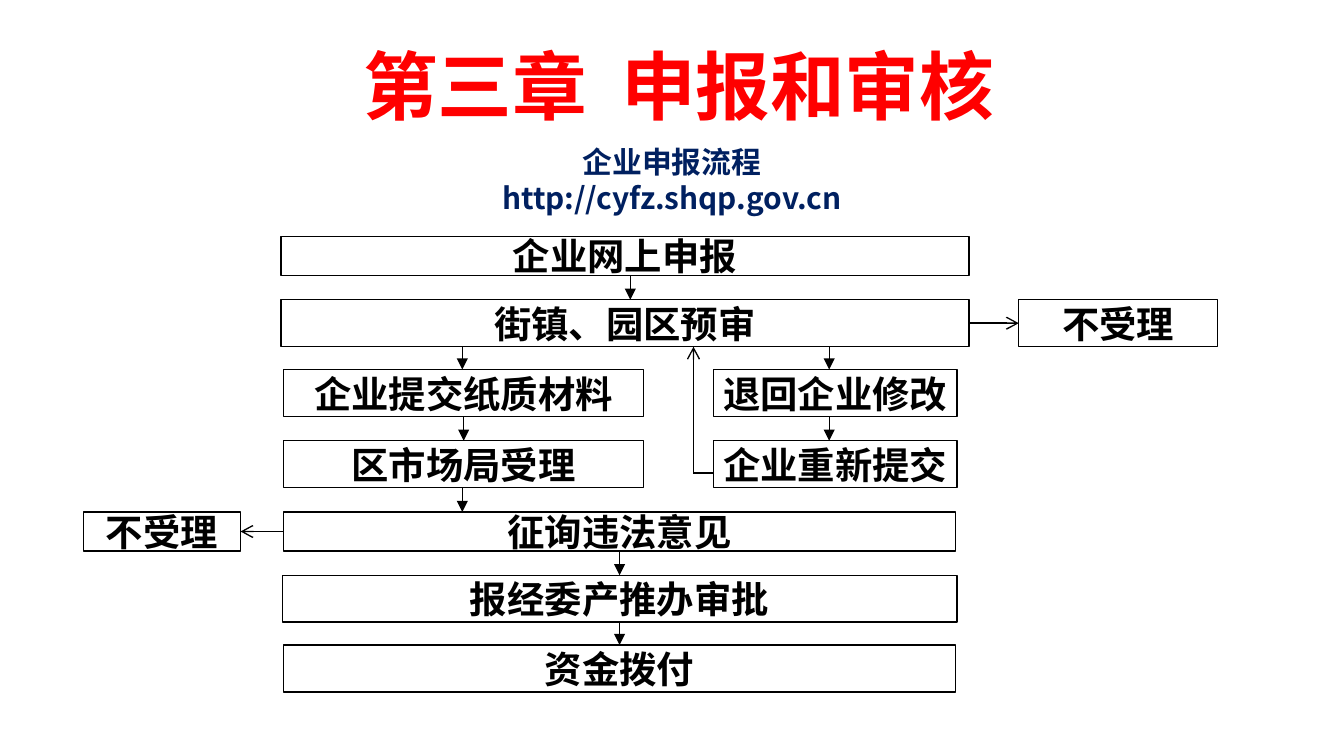
from dataclasses import dataclass

from lxml import etree
from pptx import Presentation
from pptx import util as u
from pptx.dml.color import RGBColor
from pptx.enum import shapes, text
from pptx.oxml.ns import qn


@dataclass(frozen=True)
class Theme:
    font: str = "Noto Sans CJK SC"
    red: str = "FF0000"
    navy: str = "002060"
    black: str = "000000"
    white: str = "FFFFFF"
    title_size: int = 40
    subtitle_size: int = 16
    box_size: int = 20
    line_width: float = 0.75


THEME = Theme()
TOP, LEFT, BOTTOM, RIGHT = range(4)

# Rows of the flow chart: top and height
ROWS = {
    "apply": (1.76, 0.29),
    "review": (2.23, 0.35),
    "submit": (2.75, 0.35),
    "accept": (3.28, 0.35),
    "consult": (3.81, 0.29),
    "approve": (4.28, 0.35),
    "pay": (4.80, 0.35),
}

# Boxes: name, row, left, width, label
BOXES = [
    ("apply", "apply", 2.09, 5.12, "企业网上申报"),
    ("review", "review", 2.09, 5.12, "街镇、园区预审"),
    ("review_refused", "review", 7.58, 1.48, "不受理"),
    ("submit", "submit", 2.11, 2.68, "企业提交纸质材料"),
    ("return", "submit", 5.31, 1.81, "退回企业修改"),
    ("accept", "accept", 2.11, 2.68, "区市场局受理"),
    ("resubmit", "accept", 5.31, 1.81, "企业重新提交"),
    ("consult", "consult", 2.11, 5.00, "征询违法意见"),
    ("consult_refused", "consult", 0.62, 1.17, "不受理"),
    ("approve", "approve", 2.10, 5.02, "报经委产推办审批"),
    ("pay", "pay", 2.11, 5.00, "资金拨付"),
]

# Arrows between side middles: from, side, to, side, head
JOINED_ARROWS = [
    ("submit", BOTTOM, "accept", TOP, "triangle"),
    ("consult", BOTTOM, "approve", TOP, "triangle"),
    ("approve", BOTTOM, "pay", TOP, "triangle"),
    ("review", RIGHT, "review_refused", LEFT, "arrow"),
    ("consult", LEFT, "consult_refused", RIGHT, "arrow"),
]

# Downward arrows placed off the middle of a side: x, upper row, lower row
DOWN_ARROWS = [
    (4.69, "apply", "review"),
    (3.44, "review", "submit"),
    (6.17, "review", "submit"),
    (6.17, "submit", "accept"),
    (3.44, "accept", "consult"),
]


def color(value):
    return RGBColor.from_string(value)


def style_text(frame, size, value):
    for para in frame.paragraphs:
        para.alignment = text.PP_ALIGN.CENTER
        for span in para.runs:
            span.font.name = THEME.font
            span.font.size = u.Pt(size)
            span.font.bold = True
            span.font.color.rgb = color(value)
            # East Asian characters take their own font setting
            east_asian = etree.SubElement(span.font._element, qn("a:ea"))
            east_asian.set("typeface", THEME.font)


def add_heading(page, label, left, top, size, value):
    box = page.shapes.add_textbox(
        u.Inches(left), u.Inches(top), u.Inches(9), u.Inches(0.94))
    frame = box.text_frame
    frame.word_wrap = True
    frame.vertical_anchor = text.MSO_ANCHOR.MIDDLE
    frame.text = label
    style_text(frame, size, value)
    return frame


def add_box(page, row, left, width, label):
    top, height = ROWS[row]
    box = page.shapes.add_shape(
        shapes.MSO_SHAPE.RECTANGLE,
        u.Inches(left), u.Inches(top), u.Inches(width), u.Inches(height))
    box.shadow.inherit = False
    box.fill.solid()
    box.fill.fore_color.rgb = color(THEME.white)
    box.line.color.rgb = color(THEME.black)
    box.line.width = u.Pt(THEME.line_width)
    frame = box.text_frame
    frame.word_wrap = False
    frame.vertical_anchor = text.MSO_ANCHOR.MIDDLE
    frame.text = label
    style_text(frame, THEME.box_size, THEME.black)
    return box


def add_line(page, start=(0, 0), end=(0, 0), head=None):
    line = page.shapes.add_connector(
        shapes.MSO_CONNECTOR.STRAIGHT,
        *(u.Inches(value) for value in (*start, *end)))
    line.line.color.rgb = color(THEME.black)
    line.line.width = u.Pt(THEME.line_width)
    if head:
        tail_end = etree.SubElement(line.line._get_or_add_ln(), qn("a:tailEnd"))
        tail_end.set("type", head)
    etree.SubElement(line._element.spPr, qn("a:effectLst"))
    return line


def add_flow(page):
    boxes = {name: add_box(page, *details) for name, *details in BOXES}

    # Joined arrows
    for source, source_side, target, target_side, head in JOINED_ARROWS:
        line = add_line(page, head=head)
        line.begin_connect(boxes[source], source_side)
        line.end_connect(boxes[target], target_side)

    # Arrows from row to row
    for x, upper, lower in DOWN_ARROWS:
        add_line(page, (x, sum(ROWS[upper])), (x, ROWS[lower][0]), "triangle")

    # Loop from resubmission back to the review
    corner = (5.16, 3.52)
    add_line(page, corner, (5.31, 3.52))
    add_line(page, corner, (5.16, sum(ROWS["review"])), "arrow")


def main():
    # Widescreen page, 16 to 9
    deck = Presentation()
    deck.slide_width = u.Inches(10)
    deck.slide_height = u.Inches(10 * 9 / 16)
    page = deck.slides.add_slide(deck.slide_layouts[6])

    # Headings
    add_heading(page, "第三章  申报和审核", 0.55, 0.16,
                THEME.title_size, THEME.red)
    subtitle = add_heading(page, "企业申报流程\vhttp://cyfz.shqp.gov.cn", 0.5, 1,
                           THEME.subtitle_size, THEME.navy)
    subtitle.vertical_anchor = text.MSO_ANCHOR.TOP
    subtitle.margin_top = u.Inches(0.07)

    # Flow chart
    add_flow(page)

    deck.save("out.pptx")


if __name__ == "__main__":
    main()
